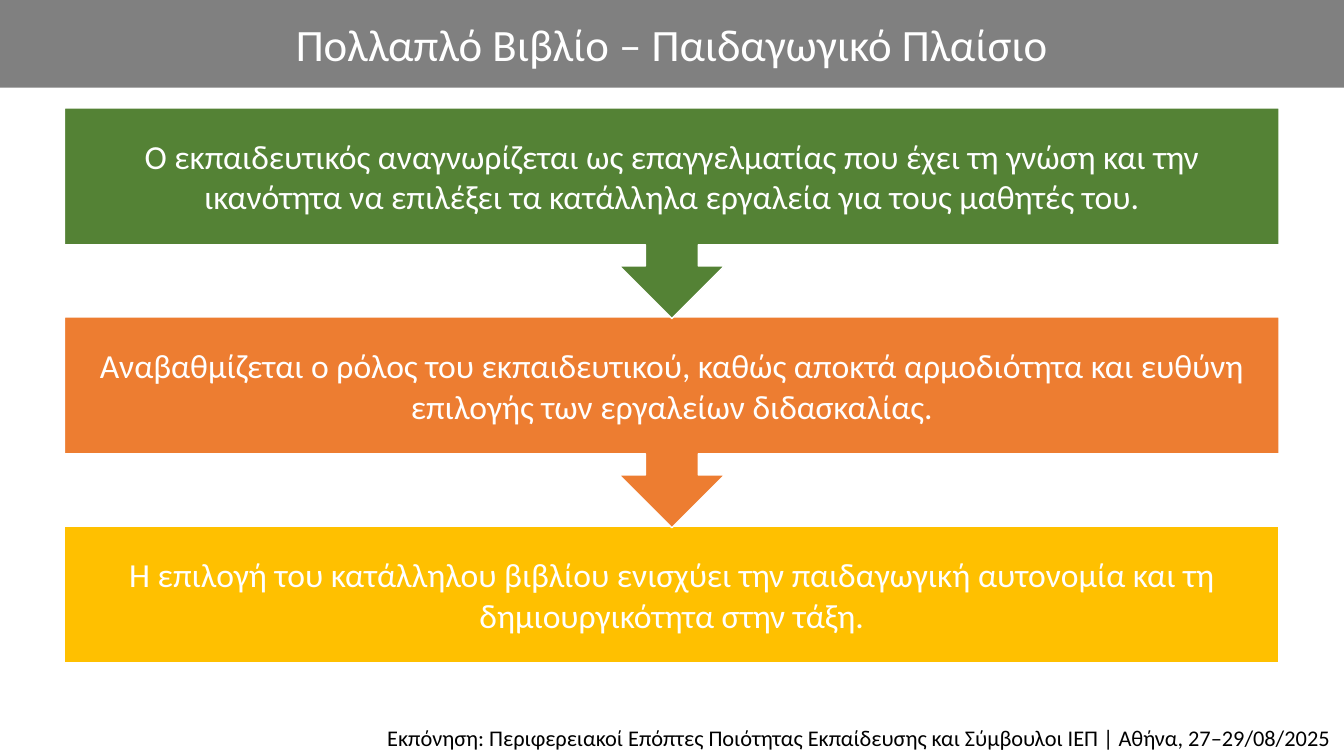
import dataclasses

import pptx
import pptx.dml.color
import pptx.enum.shapes
import pptx.enum.text
import pptx.util

SHAPE = pptx.enum.shapes.MSO_SHAPE
ALIGN = pptx.enum.text.PP_ALIGN
ANCHOR = pptx.enum.text.MSO_ANCHOR

COLUMNS, ROWS = 160, 90
TITLE_ROWS = 10.44
STAGE_LEFT, STAGE_TOP, STAGE_WIDTH = 7.68, 12.84, 144.6
STAGE_ROWS, CALLOUT_ROWS, STAGE_PITCH = 16.32, 25.08, 24.9

TITLE = "Πολλαπλό Βιβλίο – Παιδαγωγικό Πλαίσιο"
STAGES = [
    "Ο εκπαιδευτικός αναγνωρίζεται ως επαγγελματίας που έχει τη γνώση και την "
    "ικανότητα να επιλέξει τα κατάλληλα εργαλεία για τους μαθητές του.",
    "Αναβαθμίζεται ο ρόλος του εκπαιδευτικού, καθώς αποκτά αρμοδιότητα και ευθύνη "
    "επιλογής των εργαλείων διδασκαλίας.",
    "Η επιλογή του κατάλληλου βιβλίου ενισχύει την παιδαγωγική αυτονομία και τη "
    "δημιουργικότητα στην τάξη.",
]
CREDIT = ("Εκπόνηση: Περιφερειακοί Επόπτες Ποιότητας Εκπαίδευσης και Σύμβουλοι ΙΕΠ"
          " | Αθήνα, 27–29/08/2025")


@dataclasses.dataclass(frozen=True)
class Theme:
    font: str = "Calibri"
    title_size: int = 32
    stage_size: int = 24
    credit_size: int = 16
    white: str = "FFFFFF"
    black: str = "000000"
    band: str = "808080"
    stages: tuple = ("548235", "ED7D31", "FFC000")


def rgb(code):
    return pptx.dml.color.RGBColor.from_string(code)


def write(frame, text, *, font, size, color, align=ALIGN.CENTER,
          anchor=ANCHOR.MIDDLE, inset=None, space_after=None, line_spacing=None):
    frame.word_wrap = True
    frame.vertical_anchor = anchor
    if inset is not None:
        frame.margin_left = frame.margin_right = pptx.util.Inches(inset)
        frame.margin_top = frame.margin_bottom = pptx.util.Inches(inset)
    paragraph = frame.paragraphs[0]
    paragraph.alignment = align
    if space_after is not None:
        paragraph.space_after = pptx.util.Pt(space_after)
    if line_spacing is not None:
        paragraph.line_spacing = line_spacing
    run = paragraph.add_run()
    run.text = text
    run.font.name = font
    run.font.size = pptx.util.Pt(size)
    run.font.color.rgb = rgb(color)


class SlideBuilder:
    def __init__(self, deck, theme):
        self.theme = theme
        self.slide = deck.slides.add_slide(deck.slide_layouts[6])
        self.column = deck.slide_width / COLUMNS
        self.row = deck.slide_height / ROWS

    def place(self, left, top, width, height):
        """Turn grid columns and rows into slide lengths."""
        return (round(left * self.column), round(top * self.row),
                round(width * self.column), round(height * self.row))

    def block(self, kind, area, fill, outline=None):
        block = self.slide.shapes.add_shape(kind, *self.place(*area))
        block.shadow.inherit = False
        block.fill.solid()
        block.fill.fore_color.rgb = rgb(fill)
        if outline:
            block.line.color.rgb = rgb(outline)
            block.line.width = pptx.util.Pt(1)
        else:
            block.line.fill.background()
        return block

    def title(self, text):
        band = self.block(SHAPE.RECTANGLE, (0, 0, COLUMNS, TITLE_ROWS), self.theme.band)
        write(band.text_frame, text, font=self.theme.font,
              size=self.theme.title_size, color=self.theme.white)

    def stage(self, index, text, is_last):
        """Draw one step; all but the last point down to the next."""
        top = STAGE_TOP + index * STAGE_PITCH
        label_area = (STAGE_LEFT, top, STAGE_WIDTH, STAGE_ROWS)
        callout_area = (STAGE_LEFT, top, STAGE_WIDTH, CALLOUT_ROWS)
        fill = self.theme.stages[index]
        if is_last:
            self.block(SHAPE.RECTANGLE, label_area, fill, self.theme.white)
        else:
            callout = self.block(SHAPE.UP_ARROW_CALLOUT, callout_area, fill, self.theme.white)
            callout.rotation = 180
        label = self.slide.shapes.add_textbox(*self.place(*label_area))
        write(label.text_frame, text, font=self.theme.font, size=self.theme.stage_size,
              color=self.theme.white, inset=0.19, space_after=6)

    def credit(self, text):
        strip = self.block(SHAPE.RECTANGLE, (0.36, 85.32, 159.24, 4.68), self.theme.white)
        write(strip.text_frame, text, font=self.theme.font, size=self.theme.credit_size,
              color=self.theme.black, align=ALIGN.RIGHT, anchor=ANCHOR.TOP,
              line_spacing=1.1)


def main():
    deck = pptx.Presentation()
    deck.slide_width = pptx.util.Inches(13.33)
    deck.slide_height = pptx.util.Inches(7.5)
    builder = SlideBuilder(deck, Theme())
    builder.title(TITLE)
    last = len(STAGES) - 1
    for index, text in reversed(list(enumerate(STAGES))):
        builder.stage(index, text, index == last)
    builder.credit(CREDIT)
    deck.save("out.pptx")


if __name__ == "__main__":
    main()
